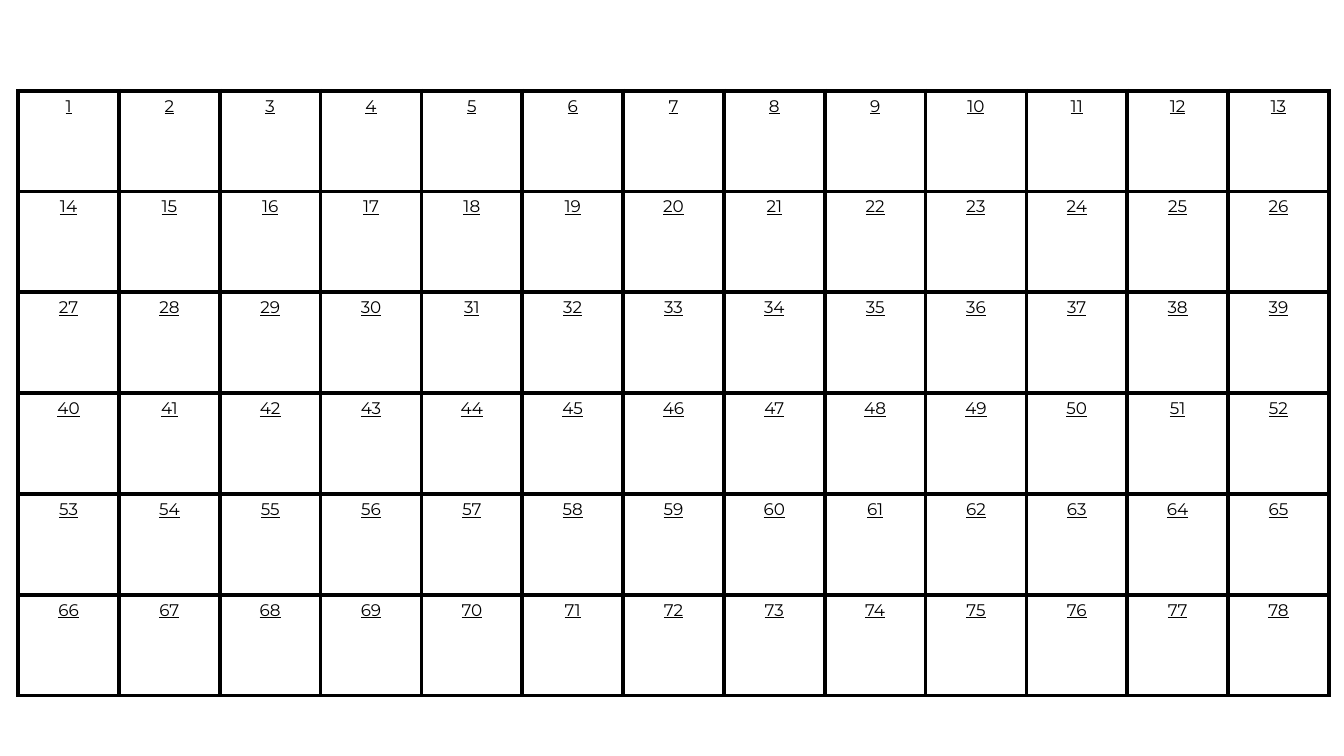
from lxml import etree
from pptx import Presentation
from pptx.dml.color import RGBColor
from pptx.enum.text import PP_ALIGN
from pptx.oxml.ns import qn
from pptx.util import Inches, Pt

BLACK = RGBColor(0x00, 0x00, 0x00)
FONT = "Montserrat"
ROWS, COLUMNS = 6, 13
CELL_SIZE = 1


def add_borders(cell, color, width):
    properties = cell._tc.get_or_add_tcPr()
    for position, side in enumerate(("lnL", "lnR", "lnT", "lnB")):
        line = etree.Element(qn(f"a:{side}"), w=str(width))
        fill = etree.SubElement(line, qn("a:solidFill"))
        etree.SubElement(fill, qn("a:srgbClr"), val=str(color))
        properties.insert(position, line)


def format_number_cell(cell, number):
    cell.text = str(number)
    cell.fill.background()
    add_borders(cell, BLACK, Pt(3))
    paragraph = cell.text_frame.paragraphs[0]
    paragraph.alignment = PP_ALIGN.CENTER
    font = paragraph.font
    font.name = FONT
    font.size = Pt(12)
    font.underline = True
    font.color.rgb = BLACK


def add_number_grid(slide, left, top):
    """Add square cells numbered row by row from 1."""
    grid = slide.shapes.add_table(
        ROWS, COLUMNS, Inches(left), Inches(top),
        Inches(COLUMNS * CELL_SIZE), Inches(ROWS * CELL_SIZE),
    ).table
    grid.first_row = False
    grid.horz_banding = False
    for number, cell in enumerate(grid.iter_cells(), start=1):
        format_number_cell(cell, number)


def main():
    presentation = Presentation()
    presentation.slide_width = Inches(13.33)
    presentation.slide_height = Inches(7.5)
    blank_layout = presentation.slide_layouts[6]
    slide = presentation.slides.add_slide(blank_layout)
    add_number_grid(slide, 0.18, 0.9)
    presentation.save("out.pptx")


if __name__ == "__main__":
    main()
